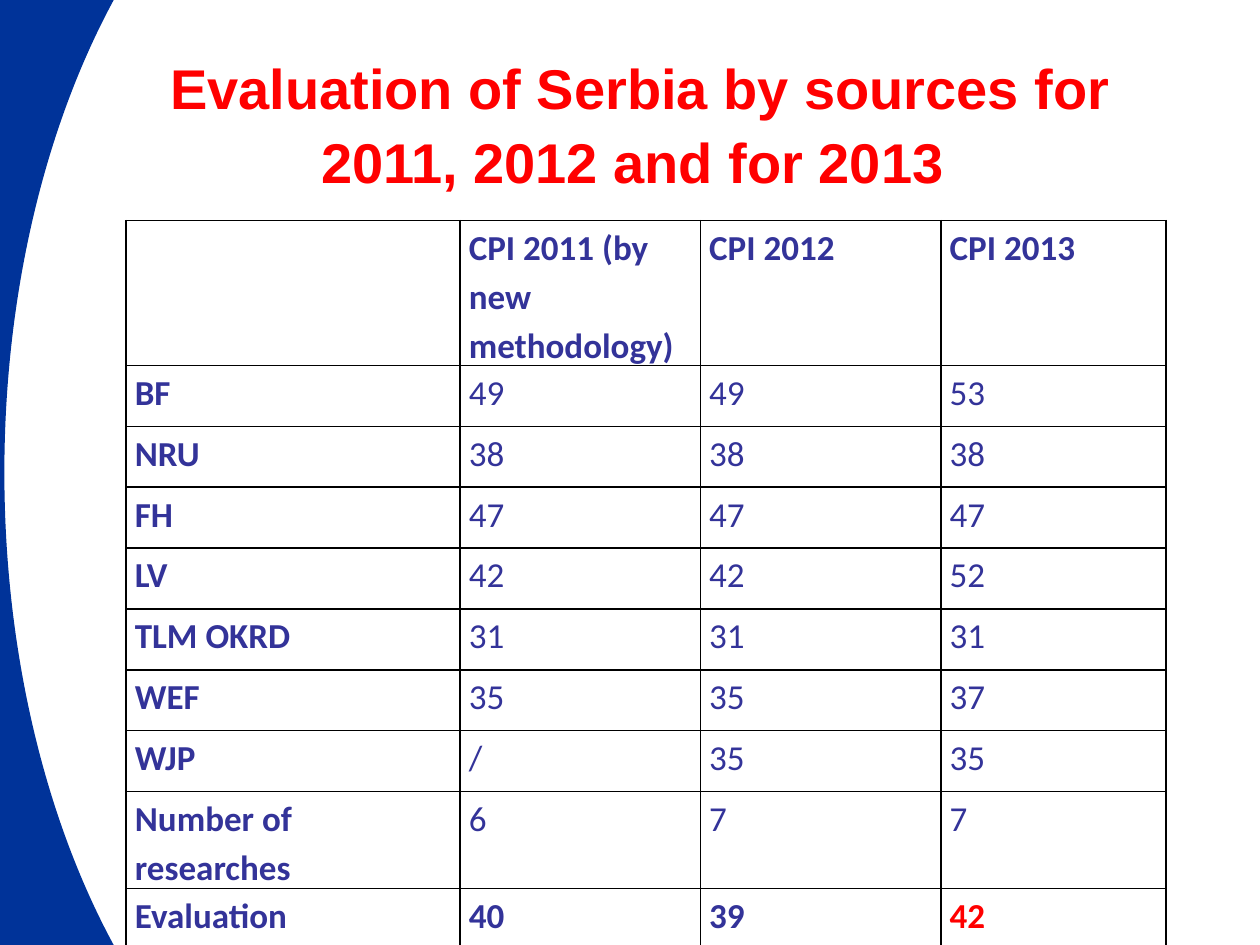
from lxml.etree import SubElement
from pptx import Presentation
from pptx.dml.color import RGBColor
from pptx.enum.shapes import MSO_SHAPE
from pptx.enum.text import MSO_ANCHOR, PP_ALIGN
from pptx.oxml.ns import qn
from pptx.util import Pt

BLUE = RGBColor(0x00, 0x33, 0x99)
INDIGO = RGBColor(0x33, 0x33, 0x99)
RED = RGBColor(0xFF, 0x00, 0x00)
BLACK = RGBColor(0x00, 0x00, 0x00)

TITLE = "Evaluation of Serbia by sources for 2011, 2012 and for 2013 "
COLUMN_WIDTHS = (190.8, 137.4, 137.4, 128.8)
ROW_HEIGHT = 34.8
ROWS = (
    ("", "CPI 2011 (by new methodology)", "CPI 2012", "CPI 2013"),
    ("BF", "49", "49", "53"),
    ("NRU", "38", "38", "38"),
    ("FH", "47", "47", "47"),
    ("LV", "42", "42", "52"),
    ("TLM OKRD", "31", "31", "31"),
    ("WEF", "35", "35", "37"),
    ("WJP", "/", "35", "35"),
    ("Number of researches", "6", "7", "7"),
    ("Evaluation", "40", "39", "42"),
)


def write_text(text_frame, text, *, font, size, color, bold=False,
               align=PP_ALIGN.LEFT, line_spacing=None):
    paragraph = text_frame.paragraphs[0]
    paragraph.alignment = align
    paragraph.line_spacing = line_spacing
    run = paragraph.add_run()
    run.text = text
    run.font.name = font
    run.font.size = Pt(size)
    run.font.bold = bold
    run.font.color.rgb = color


def add_crescent(slide, left, top, width, height):
    shape = slide.shapes.add_shape(
        MSO_SHAPE.MOON, Pt(left), Pt(top), Pt(width), Pt(height))
    shape.shadow.inherit = False
    shape.adjustments[0] = 0.513
    shape.fill.solid()
    shape.fill.fore_color.rgb = BLUE
    shape.line.fill.background()


def add_title(slide, left, top, width, height):
    shape = slide.shapes.add_textbox(Pt(left), Pt(top), Pt(width), Pt(height))
    text_frame = shape.text_frame
    text_frame.word_wrap = True
    text_frame.vertical_anchor = MSO_ANCHOR.MIDDLE
    write_text(text_frame, TITLE, font="Arial", size=32, color=RED, bold=True,
               align=PP_ALIGN.CENTER, line_spacing=Pt(42))


def add_borders(cell):
    properties = cell._tc.get_or_add_tcPr()
    for side in ("a:lnL", "a:lnR", "a:lnT", "a:lnB"):
        line = SubElement(properties, qn(side), w=str(Pt(1)))
        fill = SubElement(line, qn("a:solidFill"))
        SubElement(fill, qn("a:srgbClr"), val=str(BLACK))


def add_score_table(slide, left, top, width, height):
    table = slide.shapes.add_table(
        len(ROWS), len(COLUMN_WIDTHS),
        Pt(left), Pt(top), Pt(width), Pt(height)).table
    table.first_row = False
    table.horz_banding = False
    for column, column_width in zip(table.columns, COLUMN_WIDTHS):
        column.width = Pt(column_width)
    last_row, last_column = len(ROWS) - 1, len(COLUMN_WIDTHS) - 1
    for row_index, values in enumerate(ROWS):
        table.rows[row_index].height = Pt(ROW_HEIGHT)
        for column_index, value in enumerate(values):
            cell = table.cell(row_index, column_index)
            cell.margin_left = cell.margin_right = Pt(5.1)
            cell.margin_top = cell.margin_bottom = Pt(0)
            add_borders(cell)
            cell.fill.background()
            if not value:
                continue
            is_result = (row_index, column_index) == (last_row, last_column)
            write_text(cell.text_frame, value, font="Calibri", size=20,
                       color=RED if is_result else INDIGO,
                       bold=row_index in (0, last_row) or column_index == 0,
                       line_spacing=1.15)


def main():
    presentation = Presentation()
    presentation.slide_width = Pt(720)
    presentation.slide_height = Pt(540)
    slide = presentation.slides.add_slide(presentation.slide_layouts[6])
    add_crescent(slide, -96, -48, 192, 636)
    add_title(slide, 60, 24, 612, 90)
    add_score_table(slide, 72, 126, sum(COLUMN_WIDTHS), ROW_HEIGHT * len(ROWS))
    presentation.save("out.pptx")


if __name__ == "__main__":
    main()
